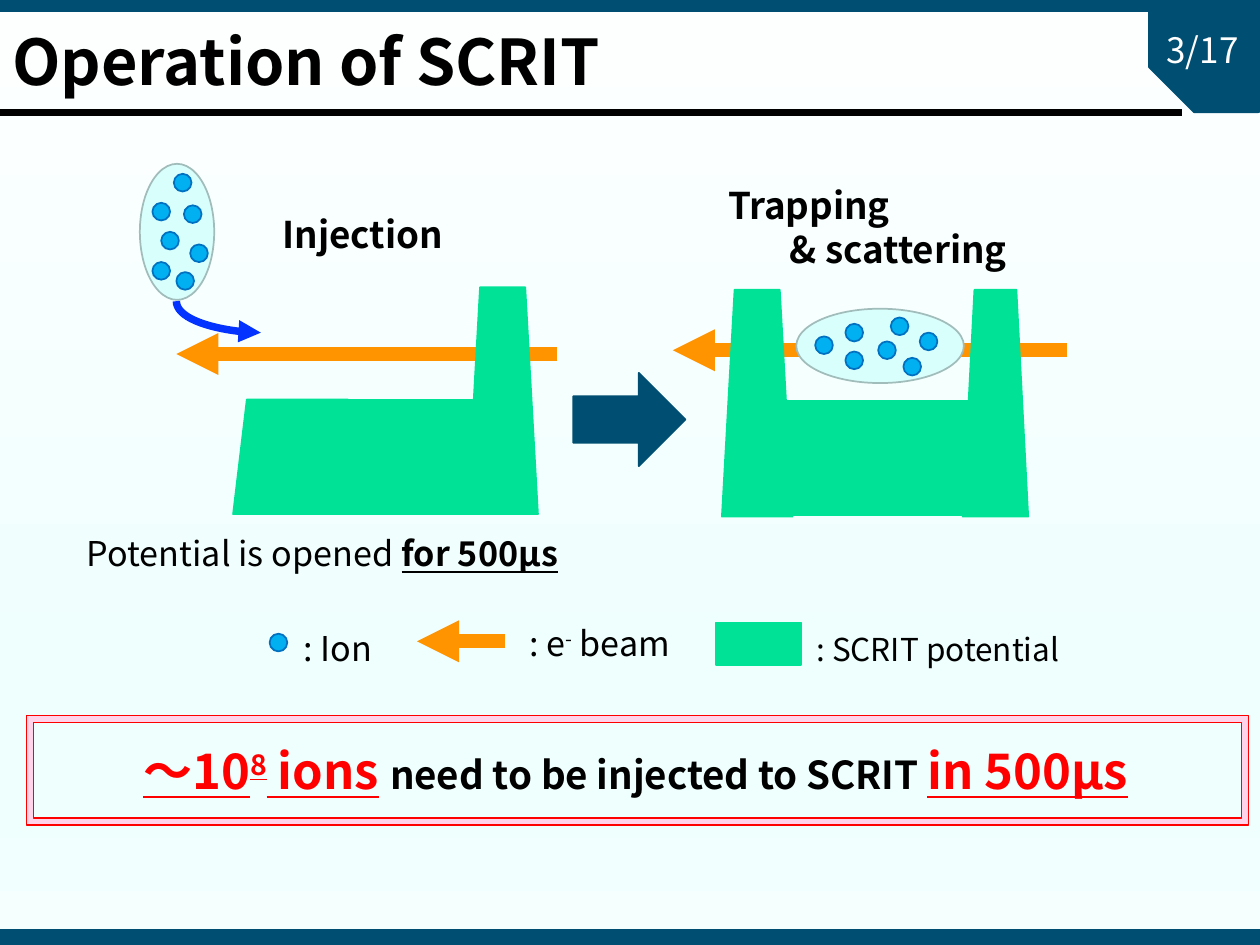
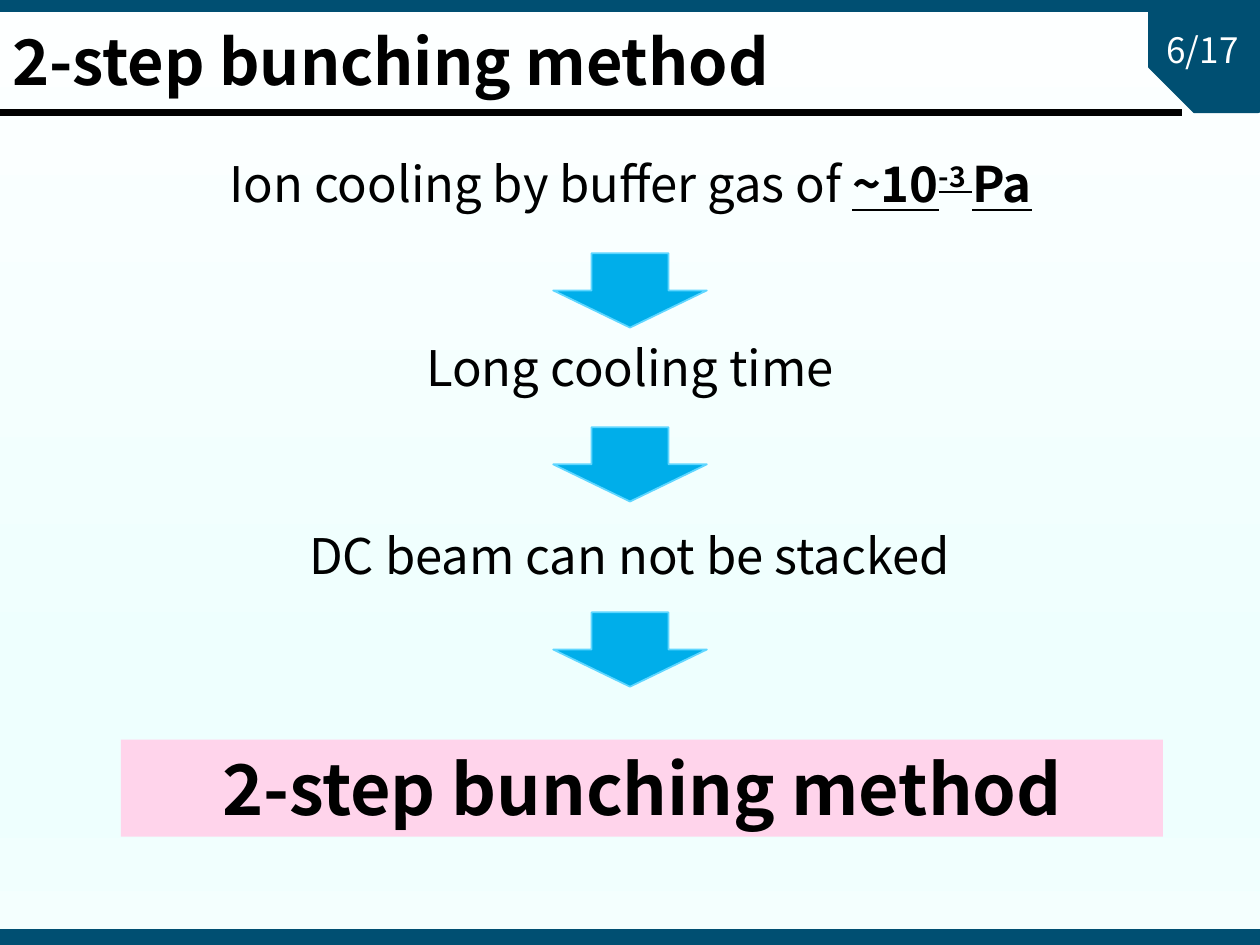
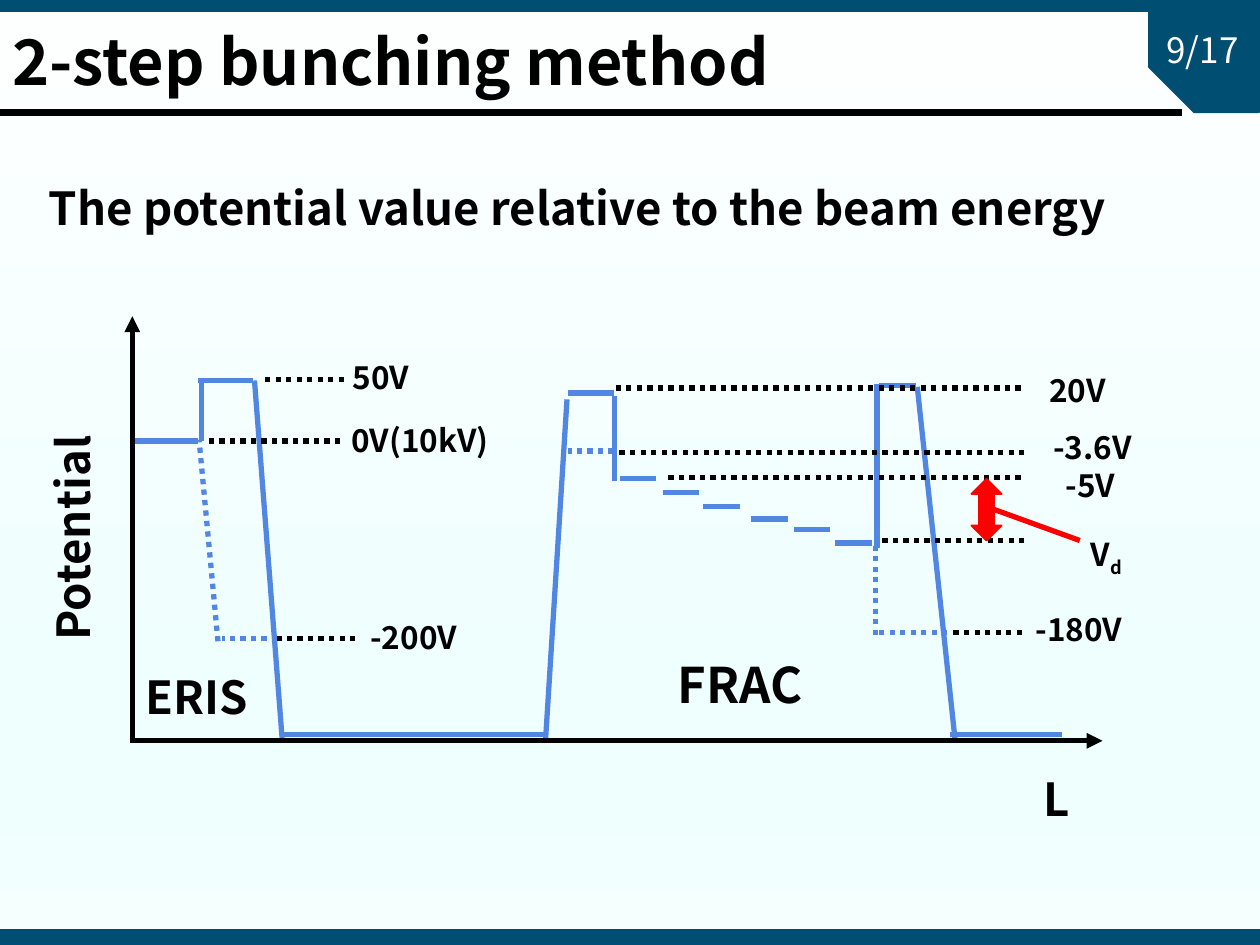
from dataclasses import dataclass
from typing import Any

from lxml import etree
from pptx import Presentation
from pptx.dml.color import RGBColor
from pptx.enum.dml import MSO_LINE
from pptx.enum.shapes import MSO_CONNECTOR, MSO_SHAPE
from pptx.enum.text import MSO_ANCHOR, PP_ALIGN
from pptx.oxml.ns import qn
from pptx.util import Inches, Pt

RECT, ELLIPSE = MSO_SHAPE.RECTANGLE, MSO_SHAPE.OVAL
TRAPEZOID, FRAME = MSO_SHAPE.TRAPEZOID, MSO_SHAPE.FRAME
SNIP_ROUND = MSO_SHAPE.SNIP_ROUND_RECTANGLE
DOWN_ARROW, RIGHT_ARROW = MSO_SHAPE.DOWN_ARROW, MSO_SHAPE.RIGHT_ARROW
UP_DOWN_ARROW = MSO_SHAPE.UP_DOWN_ARROW
STRAIGHT, CURVE = MSO_CONNECTOR.STRAIGHT, MSO_CONNECTOR.CURVE
DOTTED = MSO_LINE.ROUND_DOT
CENTER, MIDDLE = PP_ALIGN.CENTER, MSO_ANCHOR.MIDDLE

FONT = "Noto Sans CJK JP"
COLORS = {
    "black": "000000", "white": "FFFFFF", "navy": "004F72", "red": "FF0000",
    "pink": "FFD4EB", "cloud": "D9FFFD", "cloud edge": "A1BDBB",
    "ion": "00B0F0", "ion edge": "0070C0", "beam": "FF9300",
    "potential": "00E397", "injection": "0432FF", "step": "00AEEA",
    "step edge": "5FD6FF", "curve": "5286E3",
}
BACKGROUND_STOPS = [(0, "FDFFFF"), (74, "EEFFFE"), (83, "EEFFFE"), (100, "F4FFFE")]
ION_SIZE = 0.14


def rgb(name):
    return RGBColor.from_string(COLORS[name])


@dataclass
class Region:
    """A box on a slide; every part is placed relative to its corner."""
    slide: Any
    left: float = 0
    top: float = 0

    def at(self, x, y):
        return Inches(self.left + x), Inches(self.top + y)

    def inner(self, x, y):
        return Region(self.slide, self.left + x, self.top + y)

    def shape(self, kind, x, y, width, height, fill, edge=None, adjust=()):
        shape = self.slide.shapes.add_shape(
            kind, *self.at(x, y), Inches(width), Inches(height))
        shape.shadow.inherit = False
        shape.fill.solid()
        shape.fill.fore_color.rgb = rgb(fill)
        shape.line.color.rgb = rgb(edge or fill)
        shape.line.width = Pt(1)
        for index, value in enumerate(adjust):
            shape.adjustments[index] = value
        return shape

    def line(self, start, end, color, width=3, dash=None, arrow=False, kind=STRAIGHT):
        line = self.slide.shapes.add_connector(kind, *self.at(*start), *self.at(*end))
        line.line.color.rgb = rgb(color)
        line.line.width = Pt(width)
        if dash:
            line.line.dash_style = dash
        properties = line._element.spPr
        if arrow:
            etree.SubElement(properties.find(qn("a:ln")), qn("a:tailEnd"), type="triangle")
        etree.SubElement(properties, qn("a:effectLst"))
        return line

    def text(self, x, y, width, height, paragraphs, size, align=None, **style):
        """A paragraph is a string or a list of (text, style) runs."""
        box = self.slide.shapes.add_textbox(
            *self.at(x, y), Inches(width), Inches(height))
        frame = box.text_frame
        frame.word_wrap = True
        for index, runs in enumerate(paragraphs):
            paragraph = frame.add_paragraph() if index else frame.paragraphs[0]
            if align is not None:
                paragraph.alignment = align
            for words, own in [(runs, {})] if isinstance(runs, str) else runs:
                run = paragraph.add_run()
                run.text = words
                format_run(run, **{"size": size, **style, **own})
        return box

    def label(self, x, y, width, height, runs, size):
        """Bold label with tight lines."""
        box = self.text(x, y, width, height, [runs], size, bold=True)
        paragraph = box.text_frame.paragraphs[0]
        paragraph.line_spacing = 0.9
        paragraph.space_before = Pt(10)
        return box


def format_run(run, size, color="black", bold=False, underline=False, baseline=0):
    font = run.font
    font.size, font.bold, font.underline = Pt(size), bold, underline
    font.name = FONT
    font.color.rgb = rgb(color)
    properties = run._r.get_or_add_rPr()
    etree.SubElement(properties, qn("a:ea"), typeface=FONT)
    if baseline:
        properties.set("baseline", str(baseline * 1000))


# What all slides share
def set_background(slide):
    fill = slide.background.fill
    fill.gradient()
    fill.gradient_angle = 270
    stops = slide.background._cSld.find(".//" + qn("a:gsLst"))
    for stop in list(stops):
        stops.remove(stop)
    for percent, color in BACKGROUND_STOPS:
        stop = etree.SubElement(stops, qn("a:gs"), pos=str(percent * 1000))
        etree.SubElement(stop, qn("a:srgbClr"), val=color)


def add_slide(prs, title, page):
    slide = prs.slides.add_slide(prs.slide_layouts[6])
    set_background(slide)
    page_box = Region(slide)
    heading = page_box.text(0, 0, 9.5, 1.03, [title], 36, bold=True)
    heading.text_frame.vertical_anchor = MIDDLE
    heading.text_frame.paragraphs[0].line_spacing = 0.9
    page_box.shape(RECT, 0, 0, 10, 0.09, "navy")
    corner = page_box.shape(SNIP_ROUND, 9.12, 0, 0.89, 0.89, "navy", adjust=(0.03, 0.4))
    corner.rotation = 180
    page_box.text(9.16, 0.18, 0.84, 0.44, [f"{page}/17"], 20, color="white")
    page_box.line((0, 0.89), (9.38, 0.89), "black", 4)
    page_box.shape(RECT, 0, 7.38, 10, 0.12, "navy")
    return slide


# Operation of SCRIT
def ion(region, x, y):
    region.shape(ELLIPSE, x, y, ION_SIZE, ION_SIZE, "ion", "ion edge")


def ion_cloud(region, width, height, ions):
    region.shape(ELLIPSE, 0, 0, width, height, "cloud", "cloud edge")
    for x, y in ions:
        ion(region, x, y)


def beam(region, start, end, y):
    region.line((start, y), (end, y), "beam", 8, arrow=True)


def barrier(region, x, y, width):
    region.shape(TRAPEZOID, x, y, width, 1.8, "potential", adjust=(0.18,))


def injection(region):
    ion_cloud(region.inner(0.52, 0), 0.59, 1.08,
              [(0.35, 0.33), (0.4, 0.64), (0.17, 0.54), (0.1, 0.78),
               (0.29, 0.86), (0.27, 0.08), (0.1, 0.31)])
    beam(region, 3.83, 0.81, 1.51)
    # Potential well, open on the left
    region.shape(RECT, 1.79, 1.87, 1.37, 0.91, "potential")
    region.shape(TRAPEZOID, 1.26, 1.87, 1.02, 0.91, "potential", adjust=(0.12,))
    barrier(region, 3.12, 0.98, 0.56)
    # Quarter bend from the cloud to the beam
    bend = region.line((1.27, 0.88), (1.02, 1.55), "injection", 4.25, arrow=True, kind=CURVE)
    properties = bend._element.spPr
    properties.find(qn("a:prstGeom")).set("prst", "curvedConnector2")
    properties.find(qn("a:xfrm")).set("rot", str(270 * 60000))
    region.text(1.29, 0.33, 2, 0.45, ["Injection"], 21, CENTER, bold=True)
    region.text(0, 2.88, 4.73, 0.43, [[
        ("Potential is opened ", {}), ("for 500μs", {"bold": True, "underline": True}),
    ]], 19.5)


def trapping(region):
    beam(region, 3.13, 0, 1.48)
    ion_cloud(region.inner(0.98, 1.15), 1.33, 0.59,
              [(0.15, 0.22), (0.75, 0.07), (0.65, 0.26), (0.85, 0.39),
               (0.39, 0.34), (0.98, 0.19), (0.39, 0.12)])
    # Potential well, closed on both sides
    region.shape(RECT, 0.65, 1.88, 1.92, 0.91, "potential")
    barrier(region, 0.39, 1, 0.56)
    barrier(region, 2.3, 1, 0.52)
    heading = region.text(0.34, 0.1, 2.7, 0.81, ["Trapping", "& scattering"], 21, bold=True)
    second_line = heading.text_frame.paragraphs[1]
    second_line._p.get_or_add_pPr().set("marL", str(Inches(0.49)))


def legend(region):
    ion(region, 0, 0.14)
    region.text(0.17, 0.04, 0.83, 0.43, [": Ion"], 19.5)
    beam(region, 1.87, 1.17, 0.2)
    region.text(1.96, 0, 1.58, 0.43,
                [[(": e", {}), ("-", {"baseline": 30}), (" beam", {})]], 19.5)
    region.shape(RECT, 3.54, 0.05, 0.68, 0.34, "potential")
    region.text(4.24, 0.06, 3.62, 0.4, [": SCRIT potential"], 18)


def conclusion(region):
    region.shape(FRAME, 0, 0, 9.7, 0.87, "pink", "red", adjust=(0.064,))
    key = {"size": 28, "color": "red", "underline": True}
    region.text(-0.07, 0.15, 9.81, 0.57, [[
        ("〜10", key), ("8", {**key, "baseline": 30}), (" ions", key),
        (" ", {"size": 28}), ("need to be injected to SCRIT ", {}), ("in 500μs", key),
    ]], 22, CENTER, bold=True)


def operation_slide(prs):
    slide = add_slide(prs, "Operation of SCRIT", 3)
    injection(Region(slide, 0.59, 1.3))
    Region(slide).shape(RIGHT_ARROW, 4.55, 2.96, 0.89, 0.74, "navy")
    trapping(Region(slide, 5.34, 1.3))
    legend(Region(slide, 2.14, 4.89))
    conclusion(Region(slide, 0.21, 5.68))


# Reasons for the 2-step method
def reasoning(region):
    strong = {"bold": True, "underline": True}
    statements = [
        (0.7, 0, 8.61, [("Ion cooling by buffer gas of ", {}), ("~10", strong),
                        ("-3 ", {**strong, "baseline": 30}), ("Pa", strong)]),
        (2.42, 1.46, 5.16, "Long cooling time"),
        (1.29, 2.95, 7.41, "DC beam can not be stacked"),
    ]
    for x, y, width, words in statements:
        region.text(x, y, width, 0.57, [words], 28, CENTER)
    for y in (0.84, 2.22, 3.69):
        region.shape(DOWN_ARROW, 4.39, y, 1.22, 0.59, "step", "step edge")
    answer = region.text(0.96, 4.7, 8.27, 0.77, ["2-step bunching method"], 40,
                         CENTER, bold=True)
    answer.fill.solid()
    answer.fill.fore_color.rgb = rgb("pink")


def reasoning_slide(prs):
    reasoning(Region(add_slide(prs, "2-step bunching method", 6), 0, 1.17))


# Potential along the beam line
CURVE_LINES = [
    # ERIS
    ((0.01, 1), (0.52, 1)), ((0.55, 1), (0.55, 0.53)), ((0.96, 0.52), (0.52, 0.52)),
    ((0.97, 0.52), (1.19, 3.37)), ((1.19, 3.33), (3.27, 3.33)),
    # FRAC
    ((3.28, 3.37), (3.45, 0.67)), ((3.82, 0.62), (3.46, 0.62)),
    ((3.83, 1.32), (3.83, 0.64)), ((5.91, 1.85), (5.91, 0.55)),
    ((6.22, 0.56), (5.93, 0.56)), ((6.23, 0.57), (6.53, 3.37)),
    ((6.49, 3.33), (7.38, 3.33)),
]
STEP_WIDTH = 0.29
STEPS = [(3.87, 1.3), (4.21, 1.41), (4.53, 1.52), (4.91, 1.62), (5.25, 1.7), (5.58, 1.81)]
OPENED_LINES = [
    ((3.82, 1.08), (3.46, 1.08)), ((1.15, 2.57), (0.71, 2.57)),
    ((0.68, 2.59), (0.53, 0.99)), ((6.47, 2.52), (5.9, 2.52)), ((5.9, 2.54), (5.9, 1.8)),
]
# Height, left end and right end of the level, then label and its place
LEVELS = [
    (0.51, 1.02, 1.68, "50V", 1.65, 0.33),
    (1, 0.57, 1.65, "0V(10kV)", 1.64, 0.83),
    (2.57, 1.11, 1.77, "-200V", 1.79, 2.39),
    (0.58, 3.81, 7.05, "20V", 7.18, 0.43),
    (1.09, 3.86, 7.08, "-3.6V", 7.21, 0.88),
    (1.29, 4.23, 7.05, "-5V", 7.31, 1.18),
    (1.79, 5.92, 7.08, [("V", {}), ("d", {"baseline": -25})], 7.51, 1.7),
    (2.52, 6.48, 7.06, "-180V", 7.07, 2.33),
]


def potential_diagram(region):
    steps = [((x + STEP_WIDTH, y), (x, y)) for x, y in STEPS]
    for start, end in CURVE_LINES + steps:
        region.line(start, end, "curve")
    # Axes
    region.line((0, 3.37), (0, 0.01), "black", arrow=True)
    region.line((-0.02, 3.38), (7.7, 3.38), "black", arrow=True)
    region.label(7.13, 3.62, 0.57, 0.47, "L", 26)
    region.label(-1.59, 1.31, 2.27, 0.47, "Potential", 26).rotation = 270
    # Sections
    region.label(4.23, 2.7, 2.21, 0.76, "FRAC", 28)
    region.label(0.01, 2.81, 1.13, 0.47, "ERIS", 26)
    # Voltage levels
    for y, left, right, words, label_x, label_y in LEVELS:
        region.line((right, y), (left, y), "black", dash=DOTTED)
        region.label(label_x, label_y, 1.4, 0.47, words, 18)
    for start, end in OPENED_LINES:
        region.line(start, end, "curve", dash=DOTTED)
    # Depth of the steps
    region.shape(UP_DOWN_ARROW, 6.66, 1.3, 0.24, 0.49, "red")
    region.line((7.52, 1.79), (6.83, 1.54), "red")


def potential_slide(prs):
    slide = add_slide(prs, "2-step bunching method", 9)
    potential_diagram(Region(slide, 1.05, 2.5))
    Region(slide).label(0.29, 1.43, 9.49, 0.47,
                        "The potential value relative to the beam energy", 26)


def main():
    prs = Presentation()
    prs.slide_width, prs.slide_height = Inches(10), Inches(7.5)
    operation_slide(prs)
    reasoning_slide(prs)
    potential_slide(prs)
    prs.save("out.pptx")


if __name__ == "__main__":
    main()
